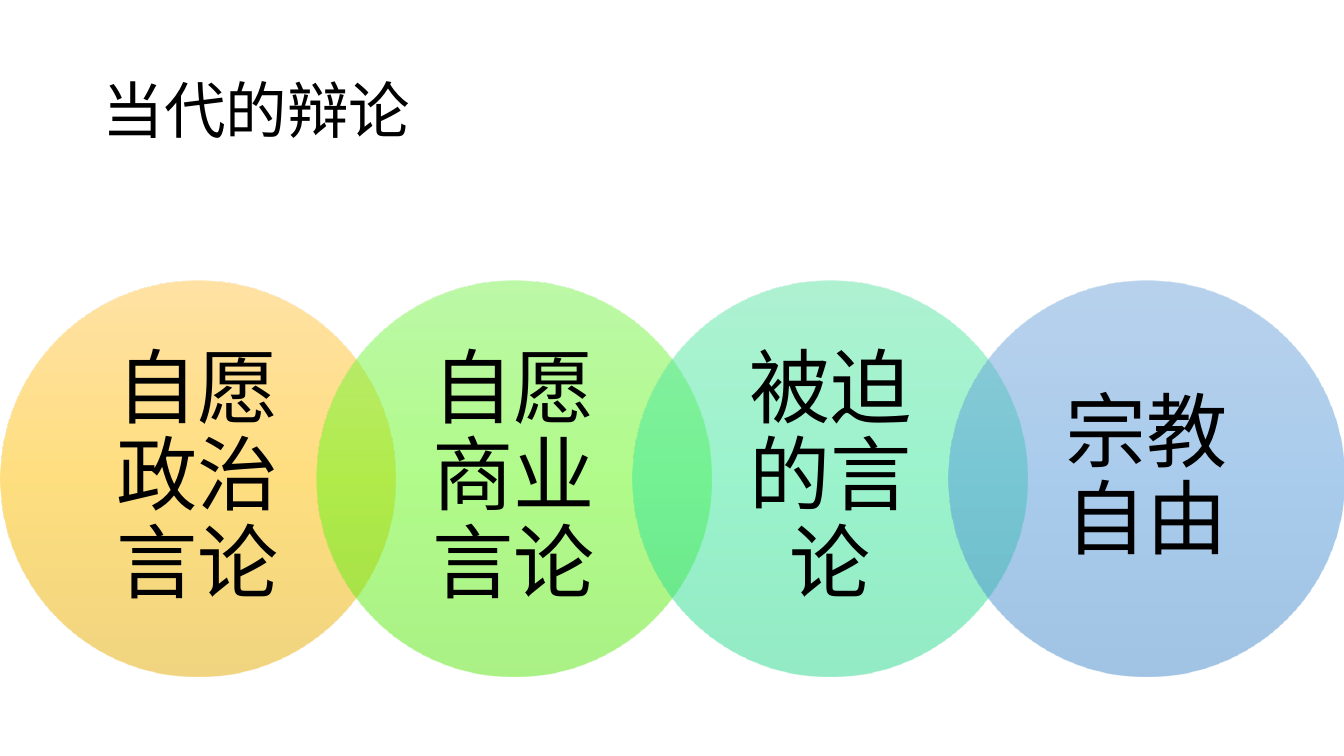
from copy import deepcopy

from lxml import etree
from pptx import Presentation
from pptx.dml.color import RGBColor
from pptx.enum.shapes import MSO_SHAPE
from pptx.enum.text import MSO_ANCHOR, MSO_AUTO_SIZE, PP_ALIGN
from pptx.oxml.ns import qn
from pptx.util import Pt

ELLIPSE = MSO_SHAPE.OVAL
MIDDLE = MSO_ANCHOR.MIDDLE
NO_AUTOFIT = MSO_AUTO_SIZE.NONE
LEFT, CENTER = PP_ALIGN.LEFT, PP_ALIGN.CENTER

SLIDE_WIDTH, SLIDE_HEIGHT = 960, 540
DIAMETER = 282.3
CIRCLE_TOP = 200.7
TOPICS = [
    ("自愿政治言论", ["FFC64B", "FFC000", "E3AB00"]),
    ("自愿商业言论", ["7AF350", "63F916", "56E50C"]),
    ("被迫的言论", ["5EE6A6", "37E99C", "27D88C"]),
    ("宗教自由", ["71A6DB", "559BDB", "448ACA"]),
]


def rgb(value):
    return RGBColor.from_string(value)


def write_text(holder, text, size, align, margin, color="000000", font="Calibri"):
    frame = holder.text_frame
    frame.word_wrap = True
    frame.auto_size = NO_AUTOFIT
    frame.vertical_anchor = MIDDLE
    frame.margin_left = frame.margin_right = Pt(margin)
    frame.margin_top = frame.margin_bottom = Pt(5.4 if align == CENTER else 3.6)
    paragraph = frame.paragraphs[0]
    paragraph.alignment = align
    paragraph.line_spacing = 0.9
    paragraph.space_before = Pt(0)
    run = paragraph.add_run()
    run.text = text
    run.font.name = font
    run.font.size = Pt(size)
    run.font.color.rgb = rgb(color)


presentation = Presentation()
presentation.slide_width = Pt(SLIDE_WIDTH)
presentation.slide_height = Pt(SLIDE_HEIGHT)
slide = presentation.slides.add_slide(presentation.slide_layouts[5])

heading = slide.shapes.title
heading.left, heading.top = Pt(66), Pt(28.75)
heading.width, heading.height = Pt(828), Pt(104.4)
write_text(heading, "当代的辩论", size=44, align=LEFT, margin=7.2)

pitch = (SLIDE_WIDTH - DIAMETER) / (len(TOPICS) - 1)
for index, (topic, shades) in enumerate(TOPICS):
    circle = slide.shapes.add_shape(
        ELLIPSE, Pt(index * pitch), Pt(CIRCLE_TOP), Pt(DIAMETER), Pt(DIAMETER)
    )
    circle.shadow.inherit = False
    circle.line.fill.background()

    circle.fill.gradient()
    circle.fill.gradient_angle = 270
    stop_list = circle._element.spPr.find(qn("a:gradFill")).find(qn("a:gsLst"))
    stop_list.append(deepcopy(stop_list[0]))
    for stop, position, shade in zip(circle.fill.gradient_stops, (0, 0.5, 1), shades):
        stop.position = position
        stop.color.rgb = rgb(shade)
    for shade_color in stop_list.iter(qn("a:srgbClr")):
        etree.SubElement(shade_color, qn("a:alpha"), val="50000")

    write_text(circle, topic, size=58, align=CENTER, margin=15.6)

presentation.save("out.pptx")
